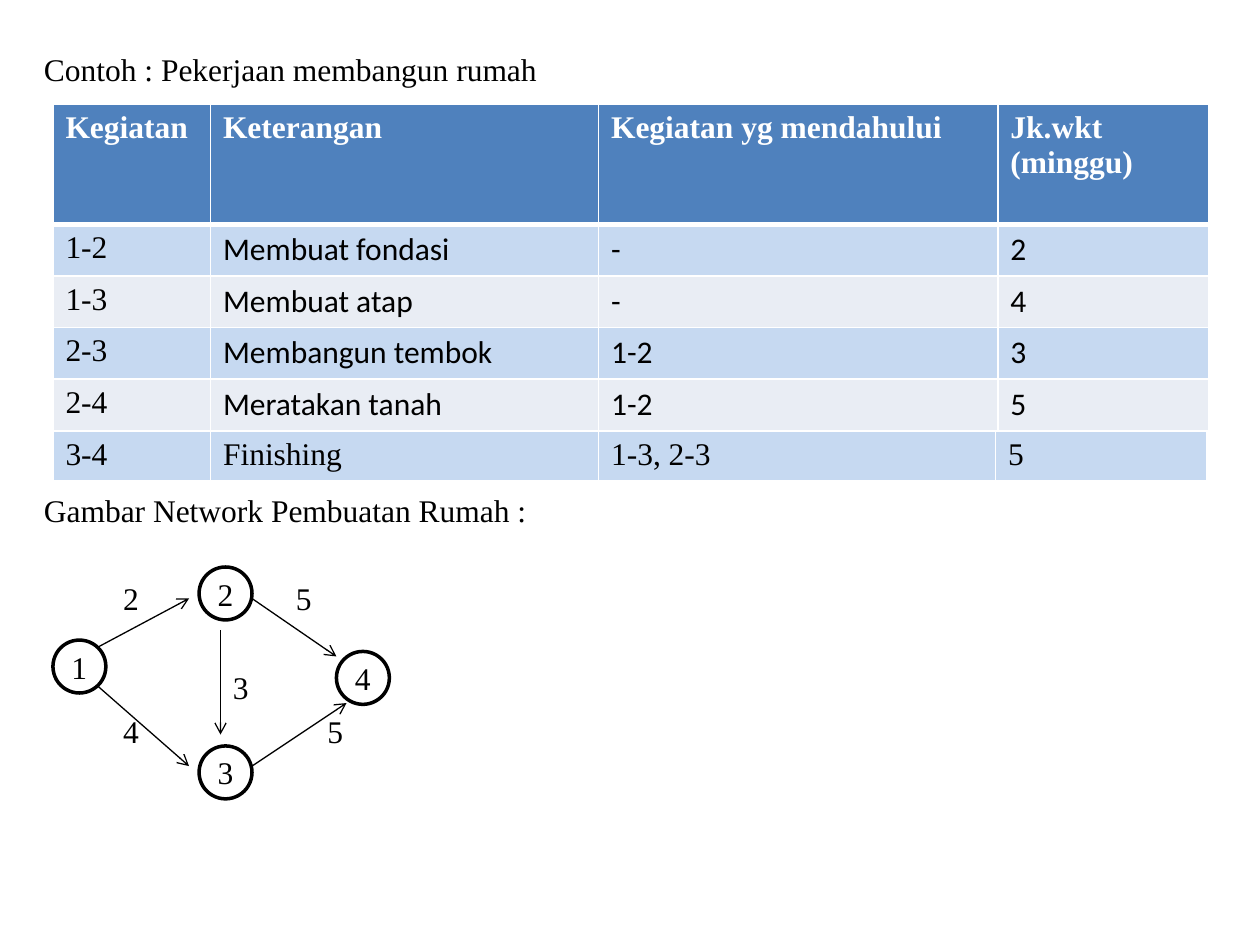
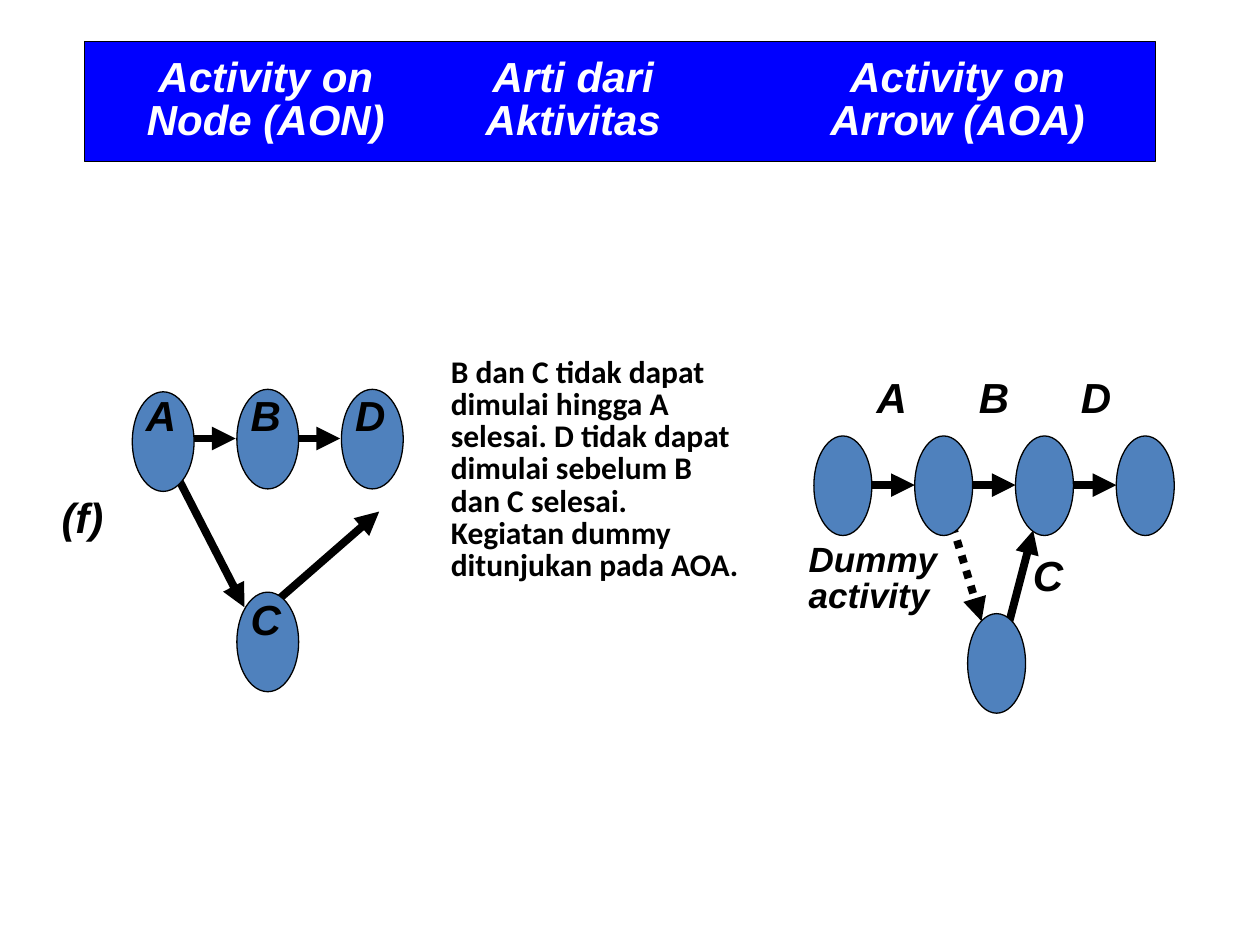
import pptx
import pptx.util
import pptx.dml.color
import pptx.enum.dml
import pptx.enum.shapes
import pptx.enum.text
import pptx.oxml
import pptx.oxml.ns
from dataclasses import dataclass
from lxml import etree
from pptx.util import Inches

SHAPE = pptx.enum.shapes.MSO_SHAPE
ALIGN = pptx.enum.text.PP_ALIGN
ANCHOR = pptx.enum.text.MSO_ANCHOR
DASH = pptx.enum.dml.MSO_LINE


@dataclass(frozen=True)
class Theme:
    black: str = "000000"
    white: str = "FFFFFF"
    node: str = "4F81BD"
    banner: str = "0000FF"
    band_dark: str = "C6D9F1"
    band_light: str = "E9EDF4"
    serif: str = "Times New Roman"
    sans: str = "Calibri"
    display: str = "Arial"
    body_size: int = 18
    note_size: int = 20
    label_size: int = 24
    thin: float = 0.75
    ring: float = 2
    thick: float = 4.5
    tight: float = 0.85


THEME = Theme()
DISPLAY = dict(font=THEME.display, size=THEME.label_size, bold=True, italic=True)


def rgb(color):
    return pptx.dml.color.RGBColor.from_string(color)


def add_run(p, text, font=THEME.serif, size=THEME.body_size, color=THEME.black,
            bold=False, italic=False):
    r = p.add_run()
    r.text = text
    r.font.name, r.font.size = font, pptx.util.Pt(size)
    r.font.bold, r.font.italic = bold, italic
    r.font.color.rgb = rgb(color)


def add_text(slide, x, y, w, h, text, wrap=False, spacing=None, **style):
    tf = slide.shapes.add_textbox(Inches(x), Inches(y), Inches(w), Inches(h)).text_frame
    tf.word_wrap = wrap
    p = tf.paragraphs[0]
    p.line_spacing = spacing
    add_run(p, text, **style)


def add_outlined(slide, kind, x, y, w, h, fill, weight=THEME.thin):
    sp = slide.shapes.add_shape(kind, Inches(x), Inches(y), Inches(w), Inches(h))
    sp.shadow.inherit = False
    sp.fill.solid()
    sp.fill.fore_color.rgb = rgb(fill)
    sp.line.color.rgb = rgb(THEME.black)
    sp.line.width = pptx.util.Pt(weight)
    return sp


def add_arrow(slide, start, end, weight=THEME.thick, head="triangle", dash=None):
    line = slide.shapes.add_connector(
        pptx.enum.shapes.MSO_CONNECTOR.STRAIGHT, *map(Inches, (*start, *end)))
    line.line.color.rgb = rgb(THEME.black)
    line.line.width = pptx.util.Pt(weight)
    if dash:
        line.line.dash_style = dash
    etree.SubElement(line.line._get_or_add_ln(), pptx.oxml.ns.qn("a:tailEnd"), type=head)
    etree.SubElement(line._element.spPr, pptx.oxml.ns.qn("a:effectLst"))


def set_borders(cell, top, bottom):
    """Give a cell white borders; top and bottom are widths in points."""
    tcPr = cell._tc.get_or_add_tcPr()
    for i, (side, width) in enumerate((("L", 1), ("R", 1), ("T", top), ("B", bottom))):
        tcPr.insert(i, pptx.oxml.parse_xml(
            f'<a:ln{side} {pptx.oxml.ns.nsdecls("a")} w="{pptx.util.Pt(width)}">'
            f'<a:solidFill><a:srgbClr val="{THEME.white}"/></a:solidFill></a:ln{side}>'))


def add_activity_table(slide, x, y, col_widths, row_heights, rows, fills, cell_style):
    """Draw a table whose first row has a thick lower border."""
    table = slide.shapes.add_table(
        len(rows), len(col_widths), Inches(x), Inches(y),
        Inches(sum(col_widths)), Inches(sum(row_heights))).table
    for col, width in zip(table.columns, col_widths):
        col.width = Inches(width)
    for i, (row, height, fill) in enumerate(zip(rows, row_heights, fills)):
        table.rows[i].height = Inches(height)
        for j, text in enumerate(row):
            cell = table.cell(i, j)
            cell.fill.solid()
            cell.fill.fore_color.rgb = rgb(fill)
            set_borders(cell, top=3 if i == 1 else 1, bottom=3 if i == 0 else 1)
            add_run(cell.text_frame.paragraphs[0], text, **cell_style(i, j))


def house_tables(slide, x, y):
    rows = [
        ("Kegiatan", "Keterangan", "Kegiatan yg mendahului", "Jk.wkt (minggu)"),
        ("1-2", "Membuat fondasi", "-", "2"),
        ("1-3", "Membuat atap", "-", "4"),
        ("2-3", "Membangun tembok", "1-2", "3"),
        ("2-4", "Meratakan tanah", "1-2", "5"),
    ]

    def main_style(i, j):
        if i == 0:
            return dict(color=THEME.white, bold=True)
        return dict(font=THEME.serif if j == 0 else THEME.sans)

    add_activity_table(slide, x, y, (1.25, 3.08, 3.17, 1.67), [0.95] + [0.41] * 4, rows,
                       [THEME.node] + [THEME.band_dark, THEME.band_light] * 2, main_style)
    add_activity_table(slide, x, y + 2.59, (1.25, 3.08, 3.15, 1.68), [0.41],
                       [("3-4", "Finishing", "1-3, 2-3", "5")], [THEME.band_dark],
                       lambda i, j: {})


def house_network(slide, x, y):
    nodes = {"1": (0, 0.58), "4": (2.25, 0.67), "3": (1.16, 1.42), "2": (1.16, 0)}
    arrows = [
        ((0.35, 0.64), (1.08, 0.25)), ((0.35, 0.94), (1.08, 1.58)),
        ((1.58, 0.25), (2.25, 0.71)), ((1.58, 1.58), (2.33, 1.08)),
        ((1.33, 0.5), (1.33, 1.33)),
    ]
    durations = [("2", 0.46, 0.05), ("5", 1.83, 0.05), ("3", 1.33, 0.75),
                 ("4", 0.46, 1.1), ("5", 2.08, 1.1)]
    for text, dx, dy in durations:
        add_text(slide, x + dx, y + dy, 0.33, 0.4, text)
    for name, (dx, dy) in nodes.items():
        sp = add_outlined(slide, SHAPE.FLOWCHART_CONNECTOR, x + dx, y + dy, 0.42, 0.42,
                          THEME.white, THEME.ring)
        tf = sp.text_frame
        tf.margin_left = tf.margin_right = tf.margin_top = tf.margin_bottom = 0
        tf.word_wrap = False
        tf.vertical_anchor = ANCHOR.MIDDLE
        tf.paragraphs[0].alignment = ALIGN.CENTER
        add_run(tf.paragraphs[0], name)
    for start, end in arrows:
        add_arrow(slide, (x + start[0], y + start[1]), (x + end[0], y + end[1]),
                  THEME.thin, "arrow")


def house_slide(slide):
    add_text(slide, 0.25, 0.35, 9.42, 0.4, "Contoh : Pekerjaan membangun rumah", wrap=True)
    house_tables(slide, 0.42, 0.83)
    add_text(slide, 0.25, 3.85, 9.42, 0.4, "Gambar Network Pembuatan Rumah :", wrap=True)
    house_network(slide, 0.42, 4.5)


def column_banner(slide, x, y, w, h):
    sp = add_outlined(slide, SHAPE.RECTANGLE, x, y, w, h, THEME.banner)
    tf = sp.text_frame
    tf.margin_left = tf.margin_right = Inches(0.26)
    tf.margin_top = tf.margin_bottom = Inches(0.13)
    tf.vertical_anchor = ANCHOR.TOP
    lines = [("Activity on", "Arti dari", "Activity on"),
             ("Node (AON)", "Aktivitas", "Arrow (AOA)")]
    for i, headings in enumerate(lines):
        p = tf.add_paragraph() if i else tf.paragraphs[0]
        p.alignment = ALIGN.LEFT
        p.line_spacing = THEME.tight
        tabs = etree.SubElement(p._p.get_or_add_pPr(), pptx.oxml.ns.qn("a:tabLst"))
        for stop in (1.18, 3.62, 6.67):
            etree.SubElement(tabs, pptx.oxml.ns.qn("a:tab"), pos=str(Inches(stop)), algn="ctr")
        for heading in headings:
            add_run(p, "\t" + heading, color=THEME.white, **DISPLAY)


def add_label(slide, x, y, text):
    add_text(slide, x, y, 0.44, 0.42, text, **DISPLAY)


def node_diagram(slide, x, y):
    """Activity on node: the ellipses carry the letters."""
    pitch, mid = 0.83, 0.39
    add_arrow(slide, (x + 0.33, y + 0.64), (x + 0.89, y + 1.73))
    add_arrow(slide, (x + 0.94, y + 1.86), (x + 1.96, y + 0.97))
    for i in range(2):
        left = x + i * pitch
        add_arrow(slide, (left + 0.31, y + mid), (left + 0.82, y + mid))
    nodes = [("A", 0, 0.02, -0.05), ("C", pitch, 1.61, 1.57),
             ("D", 2 * pitch, 0, -0.05), ("B", pitch, 0, -0.05)]
    for name, dx, dy, label_dy in nodes:
        add_outlined(slide, SHAPE.OVAL, x + dx, y + dy, 0.49, 0.79, THEME.node)
        add_label(slide, x + dx + 0.01, y + label_dy, name)


def arrow_diagram(slide, x, y):
    """Activity on arrow: the letters stand beside the arrows."""
    pitch, mid, w, h = 0.8, 0.39, 0.46, 0.79
    for i, name in enumerate("ABD"):
        left = x + i * pitch
        add_label(slide, left + 0.4 + 0.01 * i, y - 0.56, name)
        add_arrow(slide, (left + 0.29, y + mid), (left + pitch, y + mid))
    add_label(slide, x + 1.64, y + 0.85, "C")
    add_arrow(slide, (x + 1.52, y + 1.59), (x + 1.74, y + 0.75))
    add_arrow(slide, (x + 1.1, y + 0.71), (x + 1.33, y + 1.47), dash=DASH.ROUND_DOT)
    for dx, dy in [(i * pitch, 0) for i in range(4)] + [(1.22, 1.41)]:
        add_outlined(slide, SHAPE.OVAL, x + dx, y + dy, w, h, THEME.node)
    add_text(slide, x - 0.14, y + 0.81, 1.4, 0.56, "Dummy activity", wrap=True,
             spacing=THEME.tight, **{**DISPLAY, "size": THEME.note_size})


def comparison_slide(slide):
    column_banner(slide, 0.67, 0.33, 8.5, 0.95)
    add_text(slide, 3.48, 2.79, 2.49, 1.82,
             "B dan C tidak dapat dimulai hingga A selesai. D tidak dapat dimulai sebelum "
             "B dan C selesai. Kegiatan dummy ditunjukan pada AOA.",
             wrap=True, spacing=THEME.tight, font=THEME.sans, bold=True)
    add_text(slide, 0.39, 3.85, 0.53, 0.42, "(f)", **DISPLAY)
    node_diagram(slide, 1.05, 3.09)
    arrow_diagram(slide, 6.46, 3.46)


def main():
    prs = pptx.Presentation()
    prs.slide_width, prs.slide_height = Inches(10), Inches(7.5)
    for build in (house_slide, comparison_slide):
        build(prs.slides.add_slide(prs.slide_layouts[6]))
    prs.save("out.pptx")


if __name__ == "__main__":
    main()
